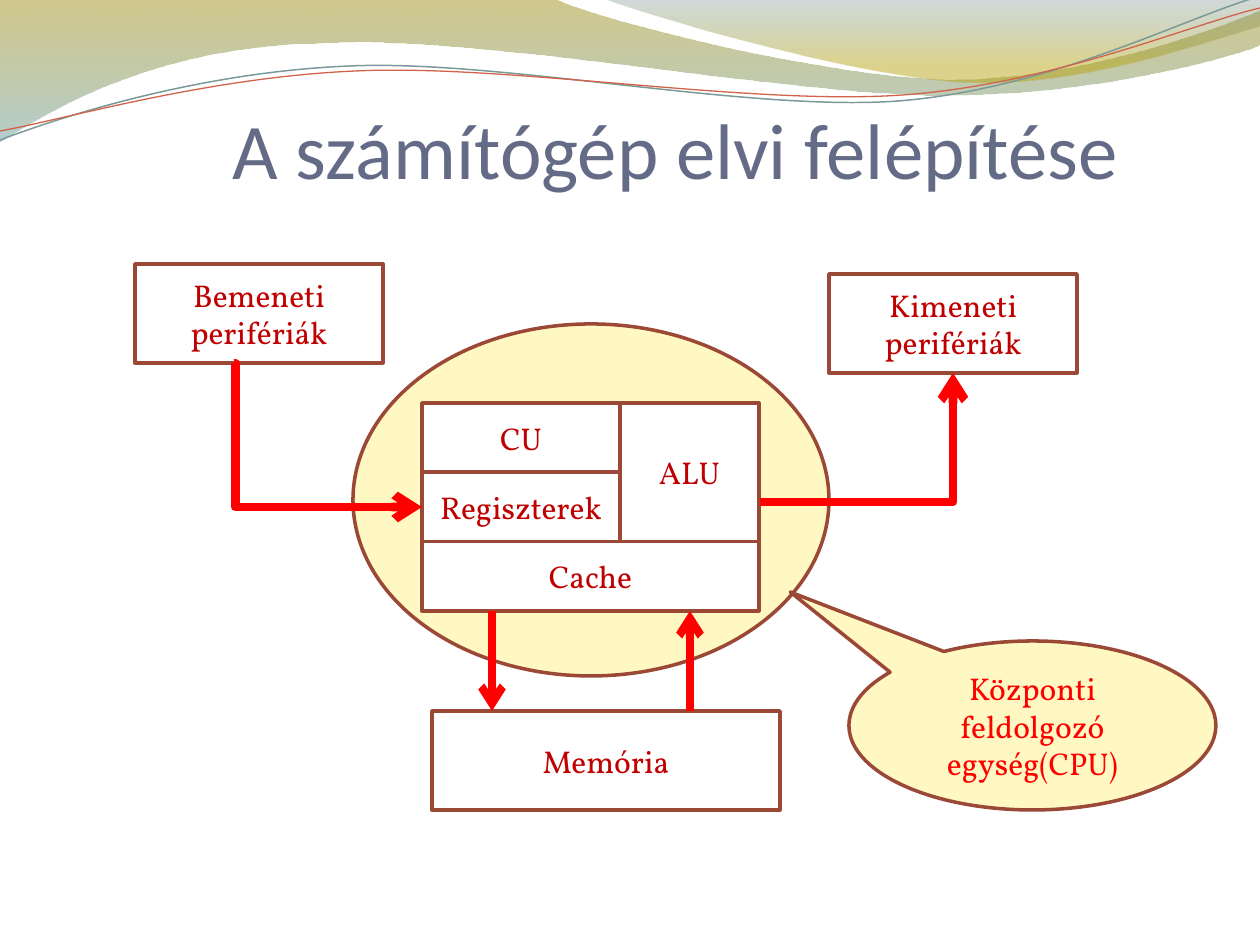
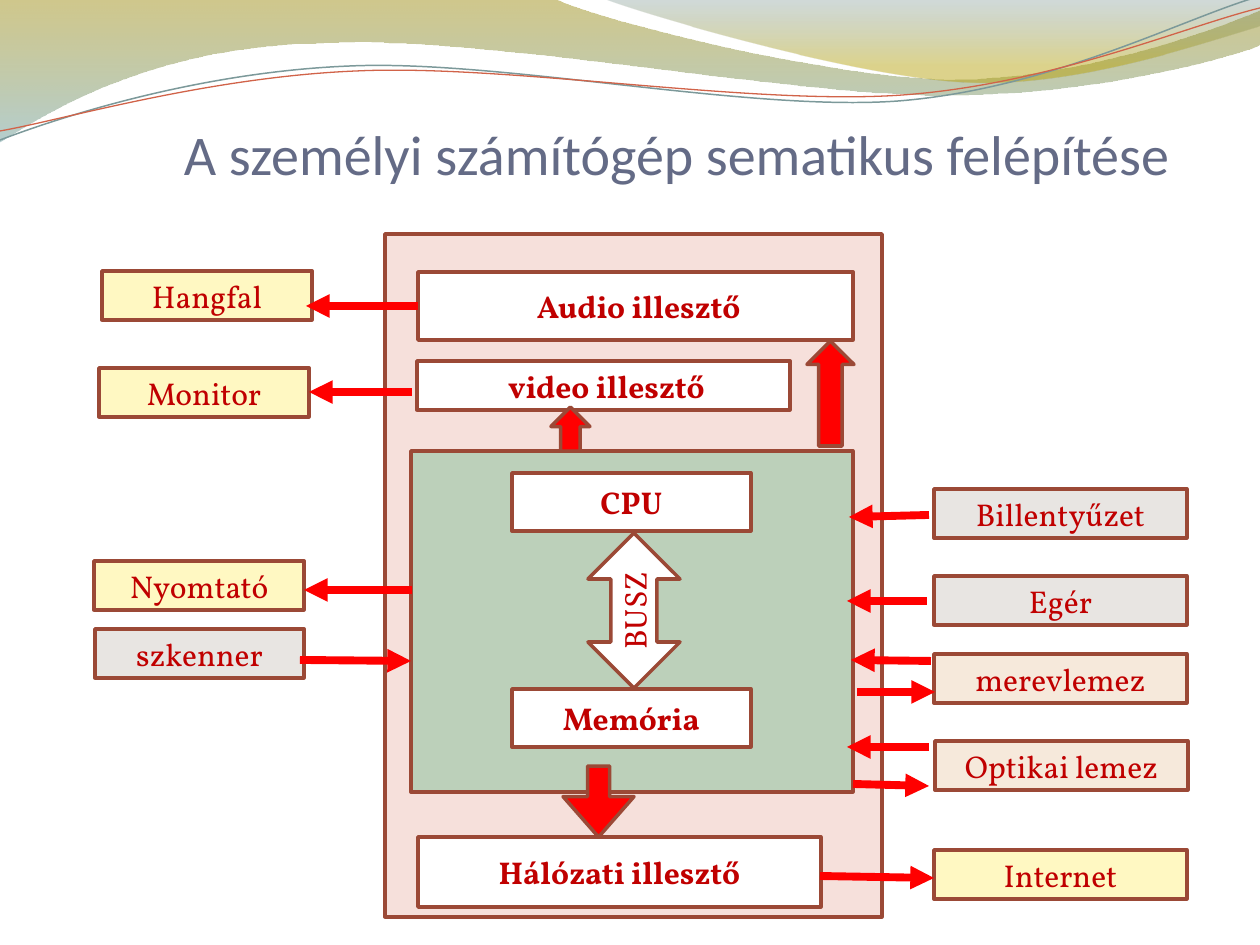
import lxml.etree
import pptx
import pptx.dml.color
import pptx.enum.shapes
import pptx.enum.text
import pptx.oxml
import pptx.oxml.ns
import pptx.util

RGB = pptx.dml.color.RGBColor
KIND = pptx.enum.shapes.MSO_SHAPE
JOIN = pptx.enum.shapes.MSO_CONNECTOR
SCALE = 914400 / 126

WHITE = RGB(0xFF, 0xFF, 0xFF)
BROWN = RGB(0x9B, 0x49, 0x36)
CREAM = RGB(0xFF, 0xF8, 0xC2)
PINK = RGB(0xF6, 0xE0, 0xDB)
GREEN = RGB(0xBC, 0xD0, 0xBA)
PEACH = RGB(0xF6, 0xE9, 0xDB)
GREY = RGB(0xE8, 0xE5, 0xE2)
RED = RGB(0xFF, 0x00, 0x00)
DARK = RGB(0xC0, 0x00, 0x00)
SLATE = RGB(0x64, 0x6B, 0x86)
OLIVE = RGB(0x97, 0x85, 0x00)
TEAL = RGB(0x77, 0xA5, 0xA6)
PINE = RGB(0x64, 0x84, 0x84)
GOLD = RGB(0xB4, 0x9F, 0x00)
MIST = RGB(0x7C, 0x99, 0x9A)
RUST = RGB(0xD1, 0x63, 0x49)

HEAD = "Calibri"
BODY = "Vollkorn"

WAVES = [
    ([[(0, 0)], [(555, -1)],
      [(600, 21), (837, 79), (955, 79)], [(1075, 79), (1207, 33), (1260, 11)],
      [(1261, 45)], [(1239, 55), (1096, 96), (940, 95)],
      [(784, 95), (481, 35), (324, 43)], [(163, 45), (58, 105), (-1, 142)]],
     [(0, OLIVE, 45), (1, TEAL, 55)]),
    ([[(604, -1)], [(641, 14), (859, 78), (969, 82)],
      [(1079, 87), (1211, 40), (1260, 26)], [(1260, 0)]],
     [(0, PINE, 30), (0.8, GOLD, 45)]),
]
CURVES = [
    ([[(0, 140)], [(60, 117), (199, 72), (349, 66)],
      [(498, 59), (747, 112), (898, 101)], [(1050, 89), (1182, 19), (1257, -3)]],
     MIST, 0.85),
    ([[(0, 131)], [(59, 121), (207, 77), (357, 71)],
      [(508, 64), (752, 106), (903, 95)], [(1053, 84), (1186, 26), (1260, 8)]],
     RUST, 0.75),
]


def px(*nums):
    """Turn px lengths into EMU."""
    return [round(n * SCALE) for n in nums]


def child(node, tag, **attrs):
    """Append a DrawingML element to a node."""
    item = lxml.etree.SubElement(node, pptx.oxml.ns.qn(tag))
    for key, value in attrs.items():
        item.set(key, str(value))
    return item


def outline(slide, steps, close):
    """Draw an outline of lines and cubic curves."""
    knots = [px(*step[-1]) for step in steps]
    pen = slide.shapes.build_freeform(*knots[0])
    pen.add_line_segments(knots[1:], close=close)
    shape = pen.convert_to_shape()
    shape.shadow.inherit = False
    sides = list(shape._element.spPr.iter(pptx.oxml.ns.qn("a:lnTo")))
    for side, step in zip(sides, steps[1:]):
        if len(step) == 3:
            side.tag = pptx.oxml.ns.qn("a:cubicBezTo")
            side.remove(side[0])
            for x, y in (px(*point) for point in step):
                child(side, "a:pt", x=x - shape.left, y=y - shape.top)
    return shape


def banner(slide):
    """Draw the waves and thin curves at the top."""
    for steps, stops in WAVES:
        shape = outline(slide, steps, True)
        shape.line.fill.background()
        shape.fill.gradient()
        shape.fill.gradient_angle = 270
        for stop, (place, color, alpha) in zip(shape.fill.gradient_stops, stops):
            stop.position = place
            stop.color.rgb = color
            child(stop._gs[0], "a:alpha", val=alpha * 1000)
    for steps, color, width in CURVES:
        shape = outline(slide, steps, False)
        shape.fill.background()
        shape.line.color.rgb = color
        shape.line.width = pptx.util.Pt(width)


def write(frame, text, size, font, color, bold=False):
    """Set centred text and format its runs."""
    frame.text = text
    frame.word_wrap = True
    for para in frame.paragraphs:
        para.alignment = pptx.enum.text.PP_ALIGN.CENTER
        for run in para.runs:
            run.font.size = pptx.util.Pt(size)
            run.font.name = font
            run.font.color.rgb = color
            run.font.bold = bold


def title(slide, box, text, size):
    """Write the slide title at the bottom of its box."""
    frame = slide.shapes.add_textbox(*px(*box)).text_frame
    frame.margin_left = frame.margin_right = frame.margin_bottom = 0
    frame.vertical_anchor = pptx.enum.text.MSO_ANCHOR.BOTTOM
    write(frame, text, size, HEAD, SLATE)


def block(slide, box, text="", fill=WHITE, kind=KIND.RECTANGLE, color=DARK, bold=False):
    """Draw an outlined shape with an optional label."""
    shape = slide.shapes.add_shape(kind, *px(*box))
    shape.shadow.inherit = False
    shape.fill.solid()
    shape.fill.fore_color.rgb = fill
    shape.line.color.rgb = BROWN
    shape.line.width = pptx.util.Pt(2)
    if text:
        write(shape.text_frame, text, 18, BODY, color, bold)
    return shape


def arrow(slide, start, end, head="triangle", width=4.5, kind=JOIN.STRAIGHT):
    """Draw a red arrow between two points."""
    link = slide.shapes.add_connector(kind, *px(*start, *end))
    link.line.color.rgb = RED
    link.line.width = pptx.util.Pt(width)
    child(link.line._get_or_add_ln(), "a:tailEnd", type=head)
    child(link._element.spPr, "a:effectLst")
    return link


def elbow(slide, start, end, preset, bend=None):
    """Draw a thick bent arrow of the given preset."""
    link = arrow(slide, start, end, "arrow", 5, JOIN.ELBOW)
    shape = link._element.spPr.find(pptx.oxml.ns.qn("a:prstGeom"))
    shape.set("prst", preset)
    if bend is not None:
        guides = shape.find(pptx.oxml.ns.qn("a:avLst"))
        child(guides, "a:gd", name="adj1", fmla=f"val {bend}")


def core(slide, box):
    """Draw the processor oval with its grid of units."""
    x, y, w, h = box
    block(slide, box, fill=CREAM, kind=KIND.OVAL)
    left, top, row, wide, side = x + 69, y + 79, 208 / 3, 198, 139
    block(slide, (left + wide, top, side, 2 * row), "ALU")
    block(slide, (left, top, wide, row), "CU")
    block(slide, (left, top + row, wide, row), "Regiszterek")
    block(slide, (left, top + 2 * row, wide + side, row), "Cache")


def scheme(slide, box):
    """Draw the principle of the computer around its core."""
    x, y, w, h = box
    core(slide, (x + 218, y + 60, 476, 352))
    block(slide, (x, y, 248, 99), "Bemeneti perifériák")
    elbow(slide, (x + 99, y + 99), (x + 287, y + 243), "bentConnector3", 700)
    block(slide, (x + w - 248, y + 10, 248, 99), "Kimeneti perifériák")
    block(slide, (x + 297, y + h - 99, 348, 99), "Memória")
    low, high = y + h - 99, y + 347
    arrow(slide, (x + 357, high), (x + 357, low), "arrow")
    arrow(slide, (x + 555, low), (x + 555, high), "arrow")
    elbow(slide, (x + 625, y + 238), (x + 818, y + 109), "bentConnector2")


def callout(slide, box):
    """Draw the bubble that names the processor."""
    shape = block(slide, box, "Központi feldolgozó egység(CPU)", CREAM,
                  KIND.OVAL_CALLOUT, RED)
    shape.adjustments[0] = -0.66
    shape.adjustments[1] = -0.79


def board(slide, box):
    """Draw the main board with processor, bus and memory."""
    x, y, w, h = box
    block(slide, box, fill=GREEN)
    block(slide, (x + 101, y + 22, 239, 58), "CPU", bold=True)
    block(slide, (x + 101, y + 238, 239, 58), "Memória", bold=True)
    bus = block(slide, (x + 177, y + 82, 92, 155), "BUSZ", kind=KIND.UP_DOWN_ARROW)
    bus.text_frame._txBody.bodyPr.set("vert", "vert270")


def tower(slide, box):
    """Draw the case with its board and adapters."""
    x, y, w, h = box
    block(slide, box, fill=PINK)
    board(slide, (x + 26, y + 217, 442, 341))
    for left, top, wide, high, text in [
            (32, 127, 373, 49, " video illesztő"),
            (33, 38, 435, 68, " Audio illesztő"),
            (33, 603, 403, 70, "Hálózati illesztő")]:
        block(slide, (x + left, y + top, wide, high), text, bold=True)
    for left, top, wide, high in [(166, 173, 39, 44), (422, 107, 47, 105)]:
        block(slide, (x + left, y + top, wide, high), fill=RED, kind=KIND.UP_ARROW)
    down = block(slide, (x + 178, y + 532, 71, 71), fill=RED, kind=KIND.UP_ARROW)
    down.rotation = 180
    down.adjustments[0] = 0.31
    down.adjustments[1] = 0.57


def device(slide, box, text, fill, links):
    """Draw a device and its arrows, given from its corner."""
    x, y, w, h = box
    block(slide, box, text, fill)
    for x1, y1, x2, y2 in links:
        arrow(slide, (x + x1, y + y1), (x + x2, y + y2))


def begin(deck, box, text, size):
    """Add a slide with the shared banner and a title."""
    slide = deck.slides.add_slide(deck.slide_layouts[6])
    banner(slide)
    title(slide, box, text, size)
    return slide


def main():
    """Build both slides and save the deck."""
    deck = pptx.Presentation()
    deck.slide_width, deck.slide_height = px(1260, 945)

    slide = begin(deck, (193, 96, 964, 99), "A számítógép elvi felépítése", 45)
    scheme(slide, (135, 264, 942, 546))
    callout(slide, (849, 641, 367, 169))

    slide = begin(deck, (83, 93, 1188, 94),
                  "A személyi számítógép sematikus felépítése", 32)
    tower(slide, (385, 234, 497, 683))
    for x, y, w, text, fill, links in [
            (102, 271, 210, "Hangfal", CREAM, [(316, 35, 204, 35)]),
            (99, 368, 210, "Monitor", CREAM, [(313, 24, 210, 24)]),
            (94, 561, 210, "Nyomtató", CREAM, [(318, 29, 210, 29)]),
            (95, 629, 209, "szkenner", GREY, [(205, 31, 316, 32)]),
            (934, 489, 253, "Billentyűzet", GREY, [(-5, 26, -85, 28)]),
            (934, 576, 253, "Egér", GREY, [(-7, 25, -87, 25)]),
            (934, 654, 253, "merevlemez", PEACH,
             [(-3, 7, -83, 6), (-77, 38, 1, 38)]),
            (935, 741, 253, "Optikai lemez", PEACH,
             [(-6, 6, -88, 6), (-82, 43, -6, 45)]),
            (934, 850, 253, "Internet", CREAM, [(-114, 26, 0, 28)])]:
        device(slide, (x, y, w, 49), text, fill, links)
    deck.save("out.pptx")


if __name__ == "__main__":
    main()
